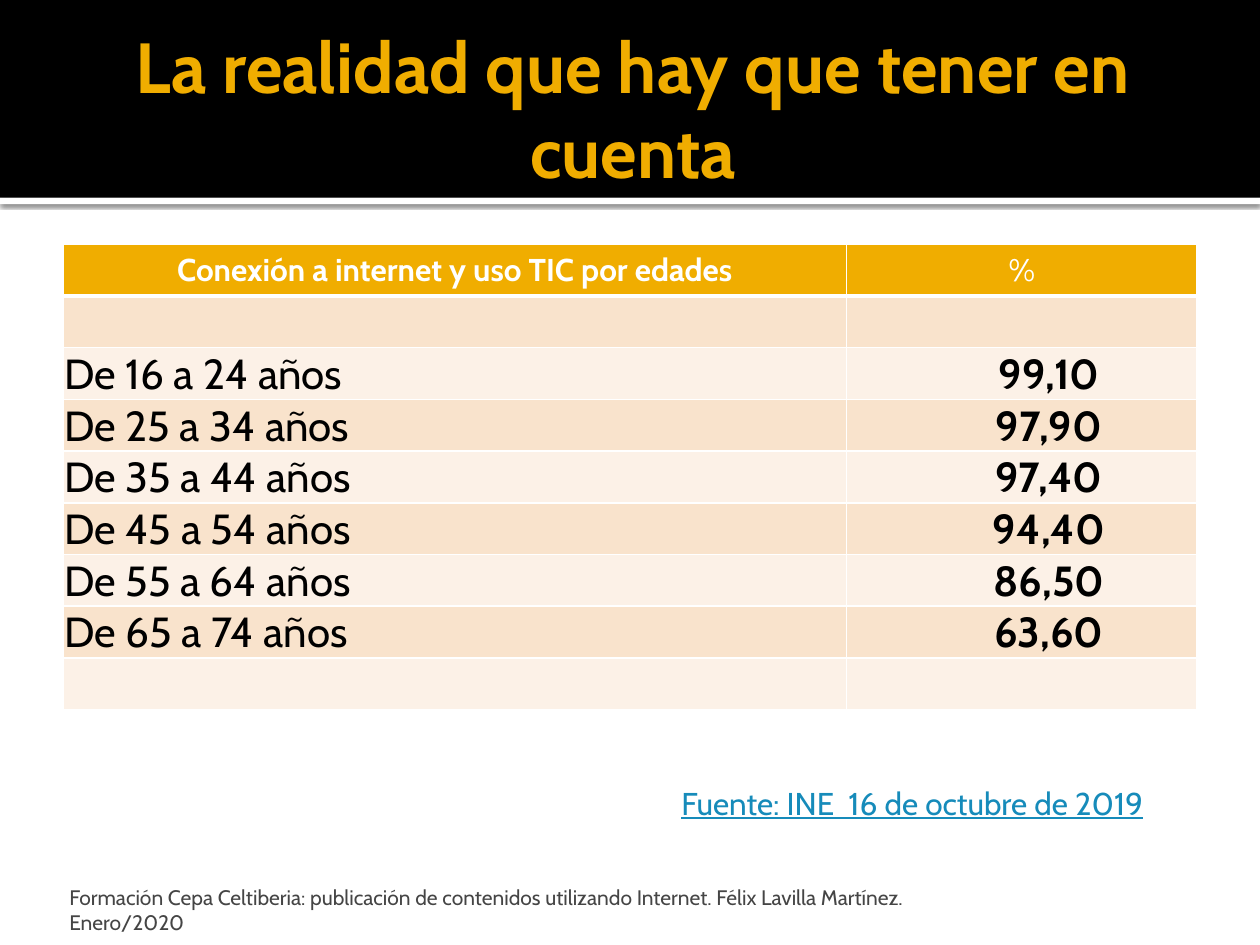
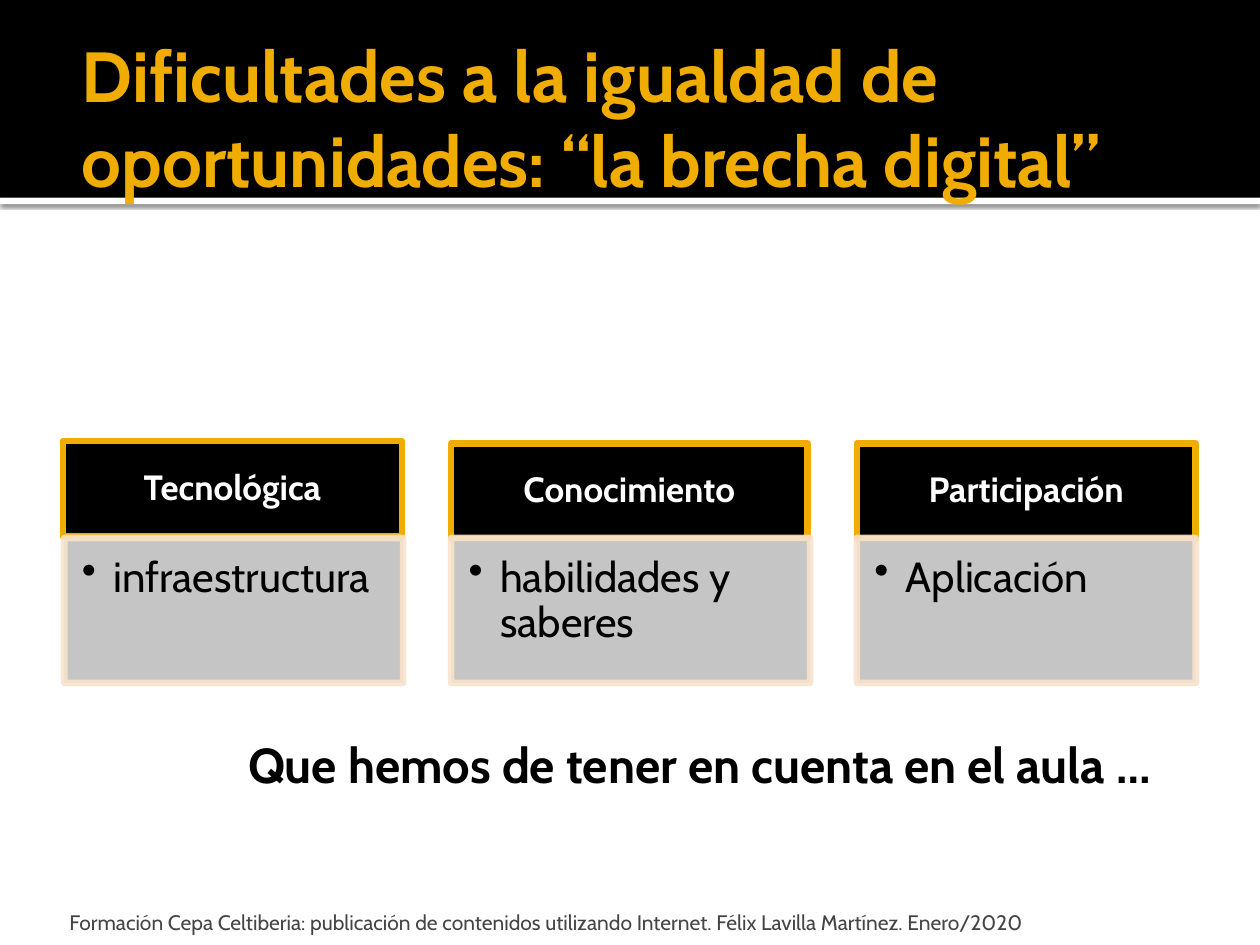
import dataclasses
import typing

import lxml.etree
import pptx
import pptx.dml.color
import pptx.enum.shapes
import pptx.enum.text
import pptx.oxml.ns
import pptx.util

PX = 9144  # 100 px to the inch
FONT = "Cabin"
GOLD, BLACK, WHITE = "F0AD00", "000000", "FFFFFF"
GREY, PEACH, CREAM = "BFBFBF", "F9E3CC", "FCF1E7"
INK, LINK = "454545", "168BBA"
ALIGN = pptx.enum.text.PP_ALIGN
ANCHOR = pptx.enum.text.MSO_ANCHOR
FOOTER = ("Formación Cepa Celtiberia: publicación de contenidos utilizando "
          "Internet. Félix Lavilla Martínez. Enero/2020")


@dataclasses.dataclass
class Box:
    left: int
    top: int
    width: int
    height: int

    def emu(self) -> list[int]:
        return [v * PX for v in (self.left, self.top, self.width, self.height)]


@dataclasses.dataclass
class Style:
    size: float
    color: str = BLACK
    bold: bool = False
    align: typing.Any = ALIGN.LEFT
    under: bool = False


@dataclasses.dataclass
class Card:
    label: str
    detail: str
    head: Box
    body: Box


TITLE = Style(40.5, GOLD, True)
HEAD = Style(20, WHITE, True, ALIGN.CENTER)
AGES = [("De 16 a 24 años", "99,10"), ("De 25 a 34 años", "97,90"),
        ("De 35 a 44 años", "97,40"), ("De 45 a 54 años", "94,40"),
        ("De 55 a 64 años", "86,50"), ("De 65 a 74 años", "63,60")]
CARDS = [
    Card("Tecnológica", "infraestructura",
         Box(50, 350, 269, 76), Box(51, 427, 269, 115)),
    Card("Conocimiento", "habilidades y saberes",
         Box(358, 352, 283, 76), Box(358, 427, 285, 115)),
    Card("Participación", "Aplicación",
         Box(680, 352, 269, 76), Box(680, 427, 269, 115)),
]


def rgb(color: str):
    return pptx.dml.color.RGBColor.from_string(color)


def sub(parent, tag: str, **attrs):
    node = lxml.etree.SubElement(parent, pptx.oxml.ns.qn(tag))
    for key, value in attrs.items():
        node.set(key, str(value))
    return node


def write(frame, text: str, style: Style):
    para = frame.paragraphs[0]
    para.alignment = style.align
    run = para.add_run()
    run.text = text
    font = run.font
    font.name, font.size = FONT, pptx.util.Pt(style.size)
    font.bold, font.underline = style.bold, style.under
    font.color.rgb = rgb(style.color)
    return para


def inset(item, left: int, top: int, right: int, bottom: int) -> None:
    item.margin_left, item.margin_top = left * PX, top * PX
    item.margin_right, item.margin_bottom = right * PX, bottom * PX


def add_text(slide, box: Box, text: str, style: Style):
    frame = slide.shapes.add_textbox(*box.emu()).text_frame
    frame.word_wrap = True
    write(frame, text, style)
    return frame


def add_rect(slide, box: Box, fill: str, line: str | None = None):
    kind = pptx.enum.shapes.MSO_SHAPE.RECTANGLE
    shape = slide.shapes.add_shape(kind, *box.emu())
    shape.shadow.inherit = False
    shape.fill.solid()
    shape.fill.fore_color.rgb = rgb(fill)
    if line:
        shape.line.color.rgb = rgb(line)
        shape.line.width = pptx.util.Pt(3.78)
    else:
        shape.line.fill.background()
    return shape


def add_slide(deck, text: str, box: Box, align, foot: int):
    """Start a slide with the shared band, title and footer."""
    slide = deck.slides.add_slide(deck.slide_layouts[5])

    # Band with a shaded white rule under it
    rule = add_rect(slide, Box(0, 157, 1000, 5), WHITE)
    effects = rule.element.spPr.find(pptx.oxml.ns.qn("a:effectLst"))
    shade = sub(effects, "a:outerShdw", blurRad=31750, dist=10160,
                dir=5400000, algn="tl", rotWithShape=0)
    sub(sub(shade, "a:srgbClr", val=BLACK), "a:alpha", val=60000)
    add_rect(slide, Box(0, 0, 1000, 157), BLACK)

    # Title, lifted above the band
    title = slide.shapes.title
    title.left, title.top, title.width, title.height = box.emu()
    title.element.getparent().append(title.element)
    frame = title.text_frame
    frame.auto_size = pptx.enum.text.MSO_AUTO_SIZE.NONE
    frame.word_wrap, frame.vertical_anchor = True, ANCHOR.MIDDLE
    inset(frame, 10, 5, 5, 5)
    write(frame, text, dataclasses.replace(TITLE, align=align))

    # Footer
    frame = add_text(slide, Box(50, 709, foot, 33), FOOTER, Style(12, INK))
    frame.vertical_anchor = ANCHOR.BOTTOM
    inset(frame, 5, 5, 5, 0)
    return slide


def edge(cell, top: int, bottom: int) -> None:
    """Draw white cell borders; widths in points."""
    props = cell._tc.get_or_add_tcPr()
    for tag, width in (("lnL", 1), ("lnR", 1), ("lnT", top), ("lnB", bottom)):
        line = sub(props, f"a:{tag}", w=width * 12700)
        sub(sub(line, "a:solidFill"), "a:srgbClr", val=WHITE)


def add_ages(slide) -> None:
    rows = [("Conexión a internet y uso TIC por edades", "%"),
            ("", ""), *AGES, ("", "")]
    box = Box(50, 194, 900, 41 * len(rows))
    table = slide.shapes.add_table(len(rows), 2, *box.emu()).table
    for col, width in zip(table.columns, (622, 278)):
        col.width = width * PX
    for r, row in enumerate(rows):
        table.rows[r].height = 41 * PX
        for c, text in enumerate(row):
            cell = table.cell(r, c)
            edge(cell, 3 if r == 1 else 1, 3 if r == 0 else 1)
            cell.fill.solid()
            fill = GOLD if r == 0 else PEACH if r % 2 else CREAM
            cell.fill.fore_color.rgb = rgb(fill)
            if not text:
                continue
            if r == 0:
                style = Style(18, WHITE, c == 0, ALIGN.CENTER)
            else:
                style = Style(24, BLACK, c == 1,
                              ALIGN.CENTER if c else ALIGN.LEFT)
                cell.vertical_anchor = ANCHOR.BOTTOM
                inset(cell, 44 if c else 1, 1, 1, 0)
            write(cell.text_frame, text, style)


def add_card(slide, card: Card) -> None:
    # Heading
    frame = add_rect(slide, card.head, BLACK, GOLD).text_frame
    frame.word_wrap, frame.vertical_anchor = True, ANCHOR.MIDDLE
    inset(frame, 16, 9, 16, 9)
    write(frame, card.label, HEAD).line_spacing = 0.9

    # Bulleted detail on a slightly clear panel
    shape = add_rect(slide, card.body, GREY, PEACH)
    for color in shape.element.spPr.iter(pptx.oxml.ns.qn("a:srgbClr")):
        sub(color, "a:alpha", val=90000)
    frame = shape.text_frame
    frame.word_wrap, frame.vertical_anchor = True, ANCHOR.TOP
    inset(frame, 14, 14, 19, 21)
    para = write(frame, card.detail, Style(24))
    para.line_spacing = 0.9
    props = para._p.get_or_add_pPr()
    props.set("marL", str(25 * PX))
    props.set("indent", str(-25 * PX))
    sub(props, "a:buChar", char="•")


def main() -> None:
    deck = pptx.Presentation()
    deck.slide_width, deck.slide_height = 1000 * PX, 750 * PX

    # Internet use by age
    slide = add_slide(deck, "La realidad que hay que tener en cuenta",
                      Box(50, 17, 900, 137), ALIGN.CENTER, 755)
    add_ages(slide)
    add_text(slide, Box(531, 617, 463, 40),
             "Fuente: INE  16 de octubre de 2019", Style(18, LINK, under=True))

    # The digital divide
    slide = add_slide(
        deck, "Dificultades a la igualdad de oportunidades: “la brecha digital”",
        Box(55, 16, 900, 153), ALIGN.LEFT, 825)
    for card in CARDS:
        add_card(slide, card)
    add_text(slide, Box(187, 578, 755, 57),
             "Que hemos de tener en cuenta en el aula …", Style(28, bold=True))

    deck.save("out.pptx")


if __name__ == "__main__":
    main()
